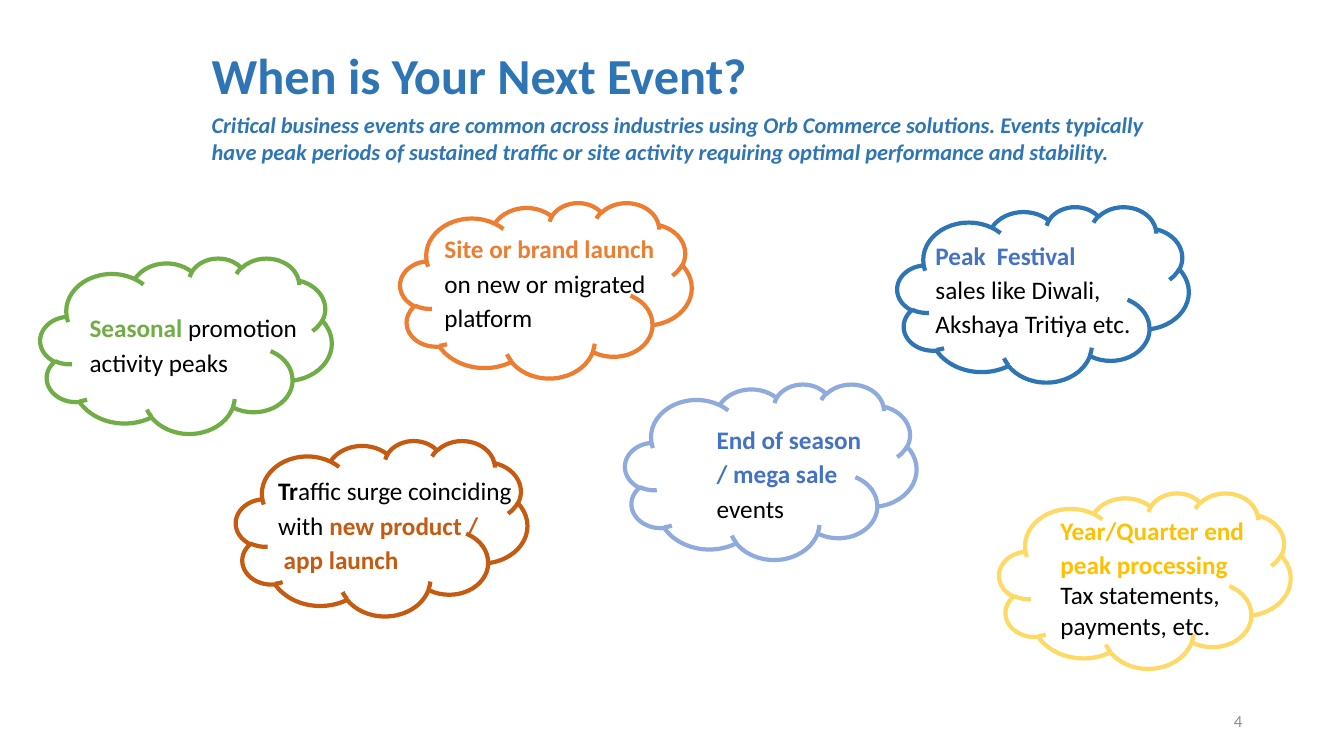
"""Build the slide of upcoming business events shown as labelled clouds."""
from dataclasses import dataclass
from typing import NamedTuple

from pptx import Presentation
from pptx.dml.color import RGBColor
from pptx.enum.shapes import MSO_SHAPE
from pptx.enum.text import MSO_ANCHOR, PP_ALIGN
from pptx.util import Inches, Pt

CLOUD = MSO_SHAPE.CLOUD
MIDDLE, TOP = MSO_ANCHOR.MIDDLE, MSO_ANCHOR.TOP
LEFT, RIGHT = PP_ALIGN.LEFT, PP_ALIGN.RIGHT

FONT = "Calibri"
BLACK = RGBColor(0x00, 0x00, 0x00)
BLUE = RGBColor(0x2E, 0x75, 0xB6)
ROYAL = RGBColor(0x44, 0x72, 0xC4)
PALE_BLUE = RGBColor(0x8F, 0xAA, 0xDC)
GREEN = RGBColor(0x70, 0xAD, 0x47)
ORANGE = RGBColor(0xED, 0x7D, 0x31)
RUST = RGBColor(0xC5, 0x5A, 0x11)
GOLD = RGBColor(0xFF, 0xC0, 0x00)
PALE_GOLD = RGBColor(0xFF, 0xD9, 0x66)
GREY = RGBColor(0x8C, 0x8C, 0x8C)

CLOUD_WIDTH, CLOUD_HEIGHT = 2.89, 1.74


class Box(NamedTuple):
    left: float
    top: float
    width: float
    height: float


class Span(NamedTuple):
    text: str
    color: RGBColor = BLACK
    bold: bool = False


@dataclass
class Heading:
    box: Box
    text: str
    size: int
    color: RGBColor = BLUE
    bold: bool = True
    italic: bool = False
    align: PP_ALIGN = LEFT
    line_spacing: int | None = None


@dataclass
class Event:
    left: float
    top: float
    outline: RGBColor
    label: Box
    lines: list[list[Span]]
    indent: float = 0.5


HEADINGS = [
    Heading(Box(2, 0.33, 6.75, 0.94), "When is Your Next Event?", 36, line_spacing=34),
    Heading(
        Box(2, 0.9, 9.67, 0.94),
        "Critical business events are common across industries using Orb Commerce "
        "solutions. Events typically have peak periods of sustained traffic or site "
        "activity requiring optimal performance and stability.",
        16,
        italic=True,
    ),
    Heading(Box(9.42, 6.95, 3, 0.4), "4", 12, GREY, bold=False, align=RIGHT),
]

EVENTS = [
    Event(0.4, 2.56, GREEN, Box(0.29, 3.05, 2.84, 0.75), [
        [Span("Seasonal ", GREEN, True), Span("promotion")],
        [Span("activity peaks")],
    ]),
    Event(3.97, 2.01, ORANGE, Box(3.81, 2.27, 2.86, 1.09), [
        [Span("Site or brand launch", ORANGE, True)],
        [Span("on new or migrated")],
        [Span("platform")],
    ]),
    Event(8.9, 2.05, BLUE, Box(8.48, 2.33, 2.86, 1.09), [
        [Span("Peak  Festival", ROYAL, True)],
        [Span("sales like Diwali,")],
        [Span("Akshaya Tritiya etc.")],
    ], indent=0.7),
    Event(2.34, 4.37, RUST, Box(2.16, 4.67, 6.67, 1.09), [
        [Span("Tr", bold=True), Span("affic surge coinciding")],
        [Span("with "), Span("new product /", RUST, True)],
        [Span(" app launch", RUST, True)],
    ]),
    Event(6.2, 3.81, PALE_BLUE, Box(6.31, 4.16, 2.41, 1.09), [
        [Span("End of season", ROYAL, True)],
        [Span("/ mega sale", ROYAL, True)],
        [Span("events")],
    ], indent=0.7),
    Event(9.91, 4.89, PALE_GOLD, Box(9.92, 5.06, 3.3, 1.35), [
        [Span("Year/Quarter end", GOLD, True)],
        [Span("peak processing\n", GOLD, True), Span("Tax statements,\npayments, etc.")],
    ]),
]


def add_text_frame(slide, box: Box, anchor: MSO_ANCHOR):
    frame = slide.shapes.add_textbox(*map(Inches, box)).text_frame
    frame.word_wrap = True
    frame.vertical_anchor = anchor
    return frame


def add_heading(slide, heading: Heading) -> None:
    paragraph = add_text_frame(slide, heading.box, MIDDLE).paragraphs[0]
    paragraph.alignment = heading.align
    if heading.line_spacing:
        paragraph.line_spacing = Pt(heading.line_spacing)
    paragraph.add_run().text = heading.text
    font = paragraph.font
    font.name, font.size = FONT, Pt(heading.size)
    font.bold, font.italic = heading.bold, heading.italic
    font.color.rgb = heading.color


def add_span(paragraph, span: Span) -> None:
    for index, piece in enumerate(span.text.split("\n")):
        if index:
            paragraph.add_line_break()
        if piece:
            run = paragraph.add_run()
            run.text = piece
            run.font.bold = span.bold
            run.font.color.rgb = span.color


def add_event(slide, event: Event) -> None:
    place = Box(event.left, event.top, CLOUD_WIDTH, CLOUD_HEIGHT)
    cloud = slide.shapes.add_shape(CLOUD, *map(Inches, place))
    cloud.shadow.inherit = False
    cloud.fill.background()
    cloud.line.color.rgb = event.outline
    cloud.line.width = Pt(3)

    frame = add_text_frame(slide, event.label, TOP)
    for index, line in enumerate(event.lines):
        paragraph = frame.add_paragraph() if index else frame.paragraphs[0]
        paragraph.space_before = Pt(3)
        paragraph.font.name, paragraph.font.size = FONT, Pt(18)
        properties = paragraph.font._element.getparent()
        properties.set("marL", str(Inches(event.indent)))
        properties.set("indent", "0")
        for span in line:
            add_span(paragraph, span)


def main() -> None:
    presentation = Presentation()
    presentation.slide_width, presentation.slide_height = Inches(13.33), Inches(7.5)
    slide = presentation.slides.add_slide(presentation.slide_layouts[6])
    for heading in HEADINGS:
        add_heading(slide, heading)
    for event in EVENTS:
        add_event(slide, event)
    presentation.save("out.pptx")


if __name__ == "__main__":
    main()
